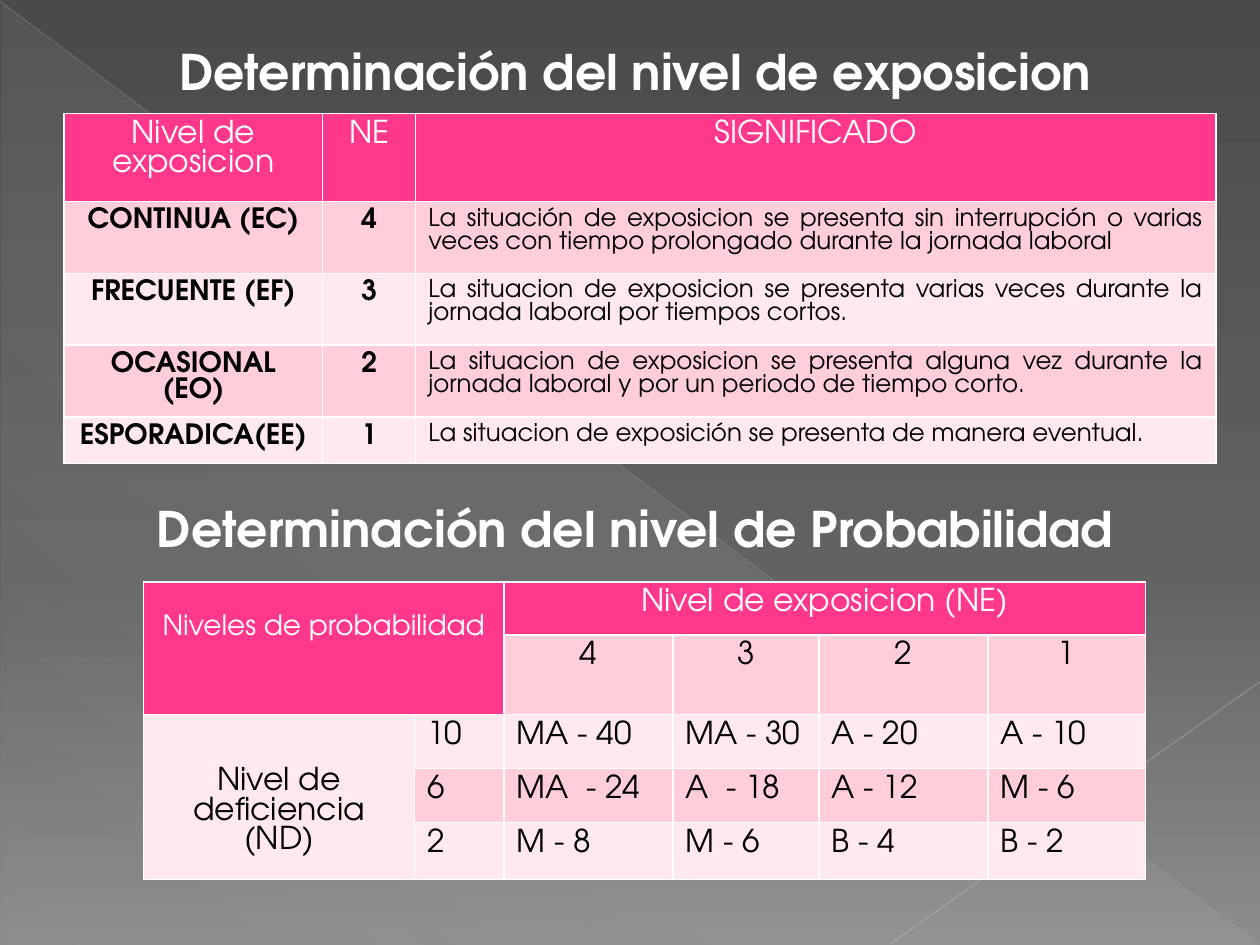
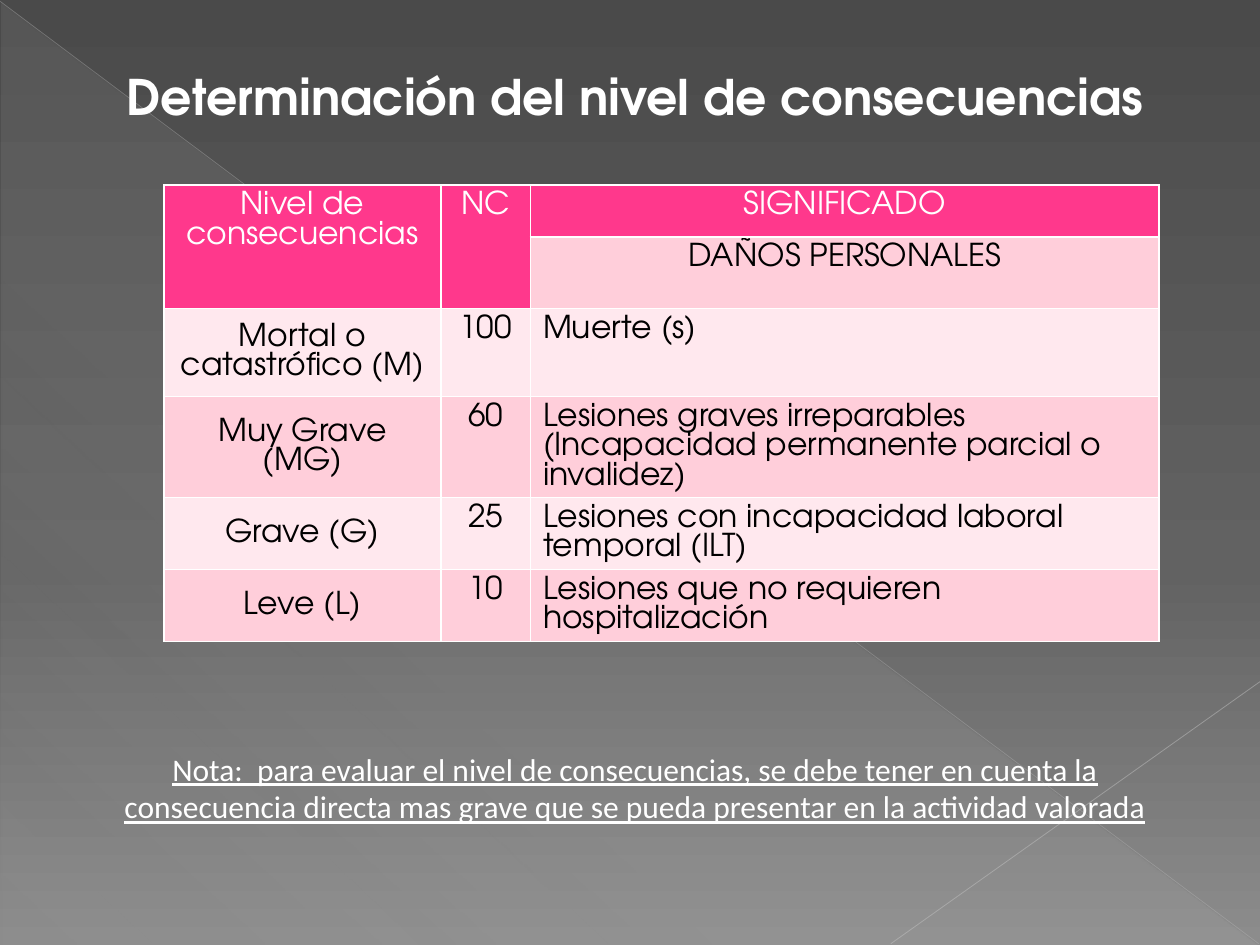
import pptx
import pptx.dml.color
import pptx.enum.shapes
import pptx.enum.text
import pptx.oxml
import pptx.oxml.ns
import pptx.util
from lxml import etree

Inches = pptx.util.Inches
Pt = pptx.util.Pt
qn = pptx.oxml.ns.qn
ALIGN = pptx.enum.text.PP_ALIGN
ANCHOR = pptx.enum.text.MSO_ANCHOR
LEFT, CENTER, JUSTIFY = ALIGN.LEFT, ALIGN.CENTER, ALIGN.JUSTIFY
FONT = "TeX Gyre Adventor"
WHITE, BLACK, PINK = "FFFFFF", "000000", "FF388C"
BANDS = "FFE8EE", "FFCEDA"
PITCH = 0.935


def color(code):
    """Turn a hex string into a colour."""
    return pptx.dml.color.RGBColor.from_string(code)


def inches(*sizes):
    """Turn numbers into lengths."""
    return [Inches(size) for size in sizes]


def write(frame, text, size, tint, align=CENTER, bold=False, font=FONT):
    """Put one formatted paragraph in a text frame."""
    frame.text = text
    line = frame.paragraphs[0]
    line.alignment = align
    line.font.name, line.font.size, line.font.bold = font, Pt(size), bold
    line.font.color.rgb = color(tint)
    return line


def tint_xml(parent, code, alpha=100):
    """Add a hex colour with its opacity in percent."""
    node = etree.SubElement(parent, qn("a:srgbClr"), val=code)
    if alpha < 100:
        etree.SubElement(node, qn("a:alpha"), val=str(alpha * 1000))


def shade(root, stops, angle):
    """Set the stops and angle of the first gradient under root."""
    grad = next(root.iter(qn("a:gradFill")))
    steps = grad.find(qn("a:gsLst"))
    for old in list(steps):
        steps.remove(old)
    for pos, code, alpha in stops:
        tint_xml(etree.SubElement(steps, qn("a:gs"), pos=str(pos * 1000)), code, alpha)
    grad.find(qn("a:lin")).set("ang", str(angle * 60000))


def ray(slide, start, end, code, width, alpha):
    """Draw a faint line across the slide."""
    kind = pptx.enum.shapes.MSO_CONNECTOR.STRAIGHT
    line = slide.shapes.add_connector(kind, *inches(*start, *end))
    line.line.width = Pt(width)
    line.line.color.rgb = color(code)
    fill = next(line.element.iter(qn("a:solidFill")))
    fill.clear()
    tint_xml(fill, code, alpha)
    etree.SubElement(line.element.spPr, qn("a:effectLst"))
    return line


def dress(master, slide):
    """Give the master its background, triangle and lines, made on a slide."""
    master.background.fill.gradient()
    shade(master.element, [(0, "4A4A4A", 100), (60, "626262", 100), (100, "8C8C8C", 100)], 90)
    kind = pptx.enum.shapes.MSO_SHAPE.RIGHT_TRIANGLE
    wedge = slide.shapes.add_shape(kind, *inches(0.01, 0.02, 9.98, 7.48))
    wedge.shadow.inherit = False
    wedge.line.fill.background()
    wedge.fill.gradient()
    shade(wedge.element, [(0, "D2D2D2", 10), (70, "D2D2D2", 8), (100, "D2D2D2", 1)], 133)
    parts = [wedge,
             ray(slide, (0, 0.01), (9.99, 7.49), "BFBFBF", 0.39, 35),
             ray(slide, (10, 5.41), (7.07, 7.49), "C6C6C6", 0.47, 45)]
    for mark, part in enumerate(parts, 20):
        next(part.element.iter(qn("p:cNvPr"))).set("id", str(mark))
        master.shapes.element.append(part.element)


def place(shape, box):
    """Move a text shape to its box and make it wrap from the top."""
    shape.left, shape.top, shape.width, shape.height = inches(*box)
    frame = shape.text_frame
    frame.word_wrap = True
    frame.vertical_anchor = ANCHOR.TOP
    frame.auto_size = pptx.enum.text.MSO_AUTO_SIZE.SHAPE_TO_FIT_TEXT
    return frame


def head(shape, box, text):
    """Format a shape as a heading."""
    write(place(shape, box), text, 28, WHITE, bold=True)


def edge(cell):
    """Draw thin white borders round a cell."""
    props = cell._tc.get_or_add_tcPr()
    for spot, side in enumerate("LRTB"):
        line = etree.Element(qn("a:ln" + side), w=str(Pt(1)))
        tint_xml(etree.SubElement(line, qn("a:solidFill")), WHITE)
        props.insert(spot, line)


def grid(slide, spot, cols, rows, texts, styles, spans=()):
    """Add a banded table; styles give size, alignment and weight by column."""
    box = inches(*spot, sum(cols), sum(rows))
    table = slide.shapes.add_table(len(rows), len(cols), *box).table
    table.first_row = table.horz_banding = False
    for col, width in zip(table.columns, cols):
        col.width = Inches(width)
    for row, height in zip(table.rows, rows):
        row.height = Inches(height)
    for r, line in enumerate(texts):
        for c, text in enumerate(line):
            cell = table.cell(r, c)
            cell.fill.solid()
            cell.fill.fore_color.rgb = color(BANDS[r % 2] if r else PINK)
            edge(cell)
            if text:
                size, align, bold = styles[c] if r else (18, CENTER, False)
                tint = BLACK if r else WHITE
                part = write(cell.text_frame, text, size, tint, align, bold)
                part.line_spacing = Pt(size * PITCH)
    for first, last in spans:
        table.cell(*first).merge(table.cell(*last))
    return table


def exposure(slide, left, top):
    """Place the table of exposure levels."""
    start = "La situacion de exposicion se presenta "
    texts = [
        ["Nivel de exposicion", "NE", "SIGNIFICADO"],
        ["CONTINUA (EC)", "4", "La situación de exposicion se presenta sin interrupción o varias "
         "veces con tiempo prolongado durante la jornada laboral"],
        ["FRECUENTE (EF)", "3",
         start + "varias veces durante la jornada laboral por tiempos cortos."],
        ["OCASIONAL (EO)", "2",
         start + "alguna vez durante la jornada laboral y por un periodo de tiempo corto."],
        ["ESPORADICA(EE)", "1", "La situacion de exposición se presenta de manera eventual."],
    ]
    styles = [(16, CENTER, True)] * 2 + [(14, JUSTIFY, False)]
    grid(slide, (left, top), [2.05, 0.74, 6.35], [0.7, 0.57, 0.57, 0.57, 0.37], texts, styles)


def chances(slide, left, top):
    """Place the matrix of probability levels."""
    texts = [
        ["Niveles de probabilidad", "", "Nivel de exposicion (NE)", "", "", ""],
        ["", "", "4", "3", "2", "1"],
        ["Nivel de deficiencia (ND)", "10", "MA - 40", "MA - 30", "A - 20", "A - 10"],
        ["", "6", "MA  - 24", "A  - 18", "A - 12", "M - 6"],
        ["", "2", "M - 8", "M - 6", "B - 4", "B - 2"],
    ]
    styles = [(18, CENTER, False)] + [(18, LEFT, False)] * 5
    spans = [((0, 0), (1, 1)), ((0, 2), (0, 5)), ((2, 0), (4, 0))]
    table = grid(slide, (left, top), [2.15, 0.71, 1.34, 1.16, 1.34, 1.25],
                 [0.42, 0.63, 0.43, 0.43, 0.45], texts, styles, spans)
    for c in range(2, 6):
        table.cell(1, c).text_frame.paragraphs[0].alignment = CENTER
    corner, side = table.cell(0, 0), table.cell(2, 0)
    title = corner.text_frame.paragraphs[0]
    title.font.size, title.line_spacing = Pt(16), Pt(16 * PITCH)
    corner.margin_top = Inches(0.26)
    side.margin_top = Inches(0.28)
    side.vertical_anchor = ANCHOR.MIDDLE


def effects(slide, left, top):
    """Place the table of consequence levels."""
    texts = [
        ["Nivel de consecuencias", "NC", "SIGNIFICADO"],
        ["", "", "DAÑOS PERSONALES"],
        ["Mortal o catastrófico (M)", "100", "Muerte (s)"],
        ["Muy Grave (MG)", "60",
         "Lesiones graves irreparables (Incapacidad permanente parcial o invalidez)"],
        ["Grave (G)", "25", "Lesiones con incapacidad laboral temporal (ILT)"],
        ["Leve (L)", "10", "Lesiones que no requieren hospitalización"],
    ]
    styles = [(18, CENTER, False)] * 2 + [(18, LEFT, False)]
    spans = [((0, c), (1, c)) for c in range(2)]
    table = grid(slide, (left, top), [2.2, 0.71, 4.99],
                 [0.41, 0.56, 0.7, 0.8, 0.57, 0.57], texts, styles, spans)
    table.cell(1, 2).text_frame.paragraphs[0].alignment = CENTER
    for r in range(2, 6):
        table.cell(r, 0).vertical_anchor = ANCHOR.MIDDLE


def note(slide, box):
    """Place the underlined note."""
    frame = place(slide.shapes.add_textbox(*inches(*box)), box)
    text = ("Nota:  para evaluar el nivel de consecuencias, se debe tener en cuenta la "
            "consecuencia directa mas grave que se pueda presentar en la actividad valorada")
    write(frame, text, 18, WHITE, font="Calibri").font.underline = True


def main():
    """Build both slides and save them."""
    deck = pptx.Presentation()
    deck.slide_width, deck.slide_height = inches(10, 7.5)
    layout = deck.slide_layouts[5]
    levels = deck.slides.add_slide(layout)
    dress(deck.slide_master, levels)
    exposure(levels, 0.51, 0.9)
    head(levels.shapes.title, (0.59, 0.28, 8.9, 0.57), "Determinación del nivel de exposicion")
    chances(levels, 1.14, 4.62)
    box = (0.76, 3.91, 8.56, 0.57)
    head(levels.shapes.add_textbox(*inches(*box)), box, "Determinación del nivel de Probabilidad")
    harm = deck.slides.add_slide(layout)
    effects(harm, 1.3, 1.47)
    head(harm.shapes.title, (0.59, 0.48, 8.9, 0.57), "Determinación del nivel de consecuencias")
    note(harm, (0.59, 5.9, 8.9, 0.71))
    deck.save("out.pptx")


if __name__ == "__main__":
    main()
